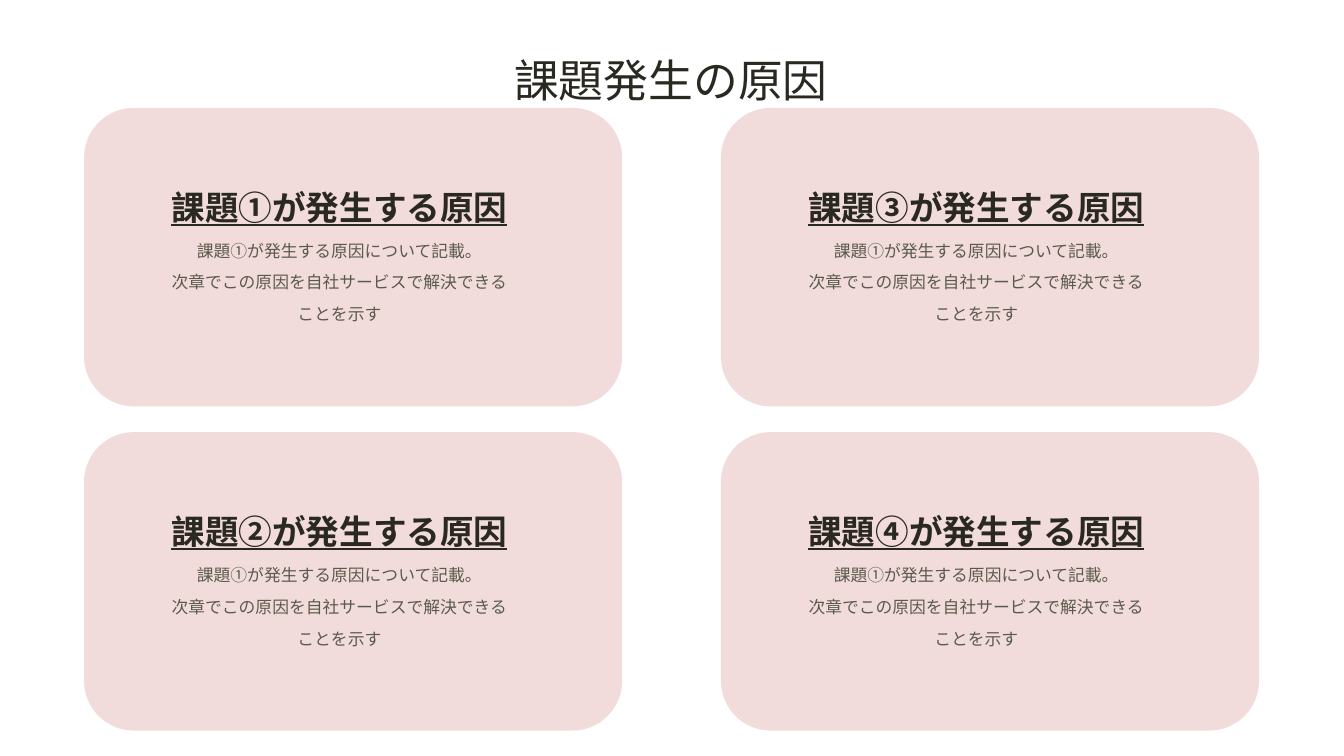
from lxml.etree import SubElement
from pptx import Presentation
from pptx.dml.color import RGBColor
from pptx.enum.shapes import MSO_SHAPE
from pptx.enum.text import MSO_ANCHOR, MSO_AUTO_SIZE, PP_ALIGN
from pptx.oxml.ns import qn
from pptx.util import Cm, Pt

COLORS = {"card": "F2DCDB", "heading": "2A2921", "detail": "5A5A4C"}
FONT = "Noto Sans CJK JP"
DETAILS = [
    "課題①が発生する原因について記載。",
    "次章でこの原因を自社サービスで解決できる",
    "ことを示す",
]


def write(frame, lines, size, spacing, color, emphasis=False):
    frame.word_wrap = True
    frame.auto_size = MSO_AUTO_SIZE.NONE
    frame.vertical_anchor = MSO_ANCHOR.TOP
    frame.margin_left = frame.margin_right = 0
    frame.margin_top = frame.margin_bottom = 0
    frame.text = "\n".join(lines)
    for paragraph in frame.paragraphs:
        paragraph.alignment = PP_ALIGN.CENTER
        paragraph.line_spacing = Pt(spacing)
        paragraph.space_before = Pt(0)
        paragraph.space_after = Pt(6)
        font = paragraph.font
        font.name = FONT
        font.size = Pt(size)
        font.bold = emphasis
        font.underline = emphasis
        font.color.rgb = RGBColor.from_string(COLORS[color])
        defaults = paragraph._p.pPr.find(qn("a:defRPr"))
        SubElement(defaults, qn("a:ea")).set("typeface", FONT)


deck = Presentation()
deck.slide_width = Cm(33.87)
deck.slide_height = Cm(19.05)
slide = deck.slides.add_slide(deck.slide_layouts[5])

for index, number in enumerate("①②③④"):
    column, row = divmod(index, 2)
    left = 2.12 + 16.05 * column
    top = 2.72 + 8.17 * row

    card = slide.shapes.add_shape(
        MSO_SHAPE.ROUNDED_RECTANGLE, Cm(left), Cm(top), Cm(13.56), Cm(7.52)
    )
    card.shadow.inherit = False
    card.fill.solid()
    card.fill.fore_color.rgb = RGBColor.from_string(COLORS["card"])
    card.line.fill.background()

    heading = slide.shapes.add_textbox(
        Cm(left + 0.29), Cm(top + 2.36), Cm(12.29), Cm(0.43)
    )
    write(heading.text_frame, [f"課題{number}が発生する原因"], 24, 18, "heading", True)

    detail = slide.shapes.add_textbox(
        Cm(left + 0.29), Cm(top + 3.25), Cm(12.29), Cm(2.79)
    )
    write(detail.text_frame, DETAILS, 12, 16.8, "detail")

title = slide.shapes.title
title.left, title.top = Cm(0.25), Cm(1.24)
title.width, title.height = Cm(33.32), Cm(0.86)
write(title.text_frame, ["課題発生の原因"], 32, 40.6, "heading")

deck.save("out.pptx")
